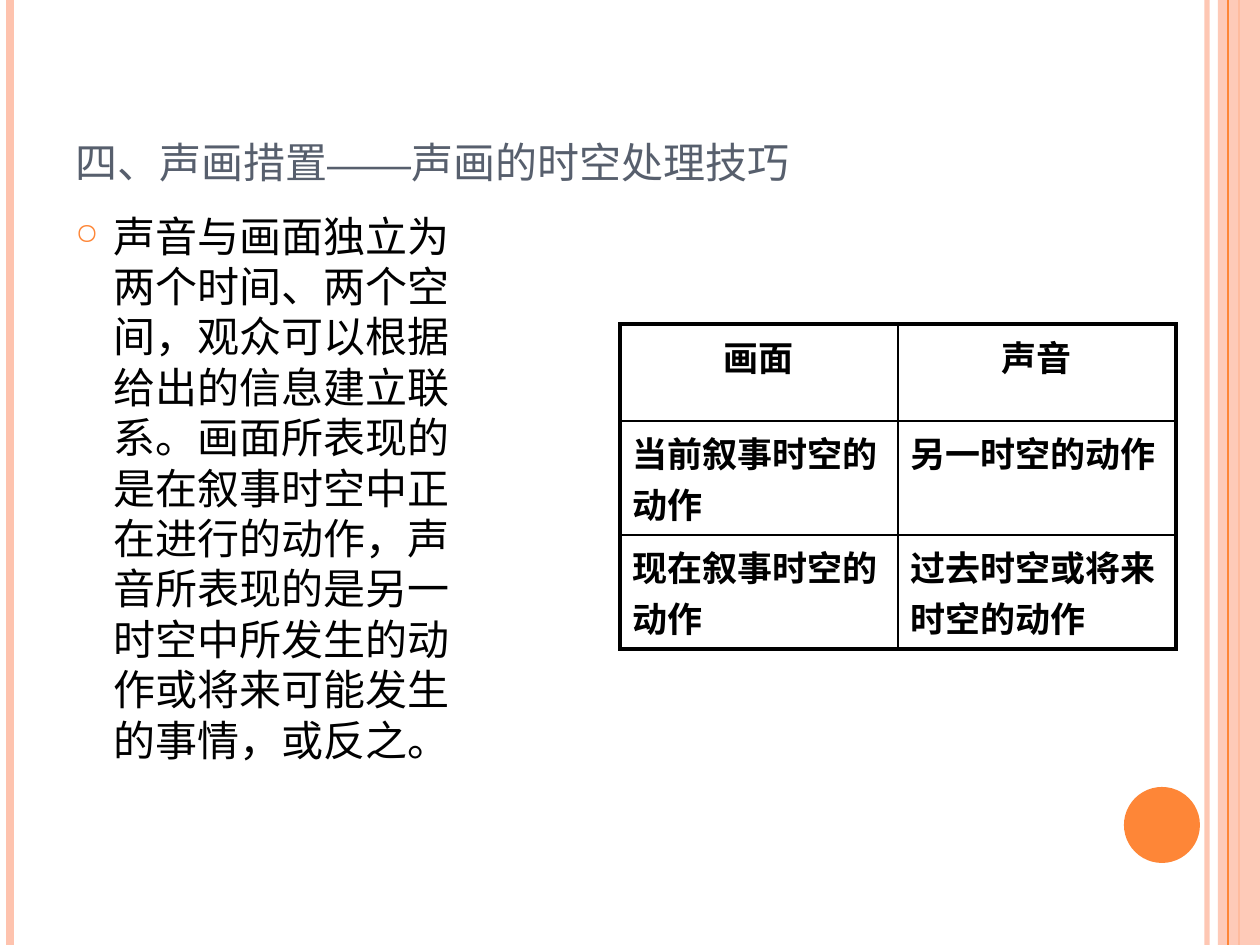
from dataclasses import dataclass

from lxml import etree
from pptx import Presentation, util as u
from pptx.dml.color import RGBColor
from pptx.enum import lang, shapes, text
from pptx.oxml import ns

TITLE = "四、声画措置——声画的时空处理技巧"
BODY = ("声音与画面独立为两个时间、两个空间，观众可以根据给出的信息建立联系。"
        "画面所表现的是在叙事时空中正在进行的动作，声音所表现的是另一时空中"
        "所发生的动作或将来可能发生的事情，或反之。")
ROWS = [
    ("画面", "声音"),
    ("当前叙事时空的动作", "另一时空的动作"),
    ("现在叙事时空的动作", "过去时空或将来时空的动作"),
]


@dataclass(frozen=True)
class Theme:
    orange: str = "FE8637"
    peach: str = "FEC3AE"
    slate: str = "575F6D"
    black: str = "000000"
    text_font: str = "TeX Gyre Schola"
    table_font: str = "Arial"
    title_size: int = 30
    body_size: int = 24
    table_size: int = 20
    outer_border: float = 2.25
    inner_border: float = 1


THEME = Theme()
PAGE_W, PAGE_H = 1260, 945
TITLE_BOX = (63, 38, 1134, 157)
BODY_BOX = (63, 204, 438, 586)
TABLE_AT = (620, 324)
COL_W = 278
HEAD_H, ROW_H = 97, 114  # body rows hold two lines of text
BAND = (1218, 0, 42, PAGE_H)
DISC = (1124, 787, 76, 76)
# x, colour, width in points, opacity in percent
LINES_BEHIND = [
    (1207, THEME.peach, 3, 93),
    (10, THEME.peach, 4.5, 100),
    (1239, THEME.orange, 1.5, 100),
]
LINE_FRONT = (1228, THEME.orange, 0.75, 100)


def px(*values):
    return [u.Emu(round(value * 914400 / 126)) for value in values]


def child(parent, tag, **attributes):
    return etree.SubElement(parent, ns.qn(tag), attributes)


def set_opacity(element, percent):
    if percent < 100:
        color = next(element.iter(ns.qn("a:srgbClr")))
        child(color, "a:alpha", val=str(percent * 1000))


def add_rule(page, x, color, width, opacity):
    """Draw a vertical line over the full page height."""
    rule = page.shapes.add_connector(
        shapes.MSO_CONNECTOR.STRAIGHT, *px(x, 0, x, PAGE_H))
    rule.line.color.rgb = RGBColor.from_string(color)
    rule.line.width = u.Pt(width)
    set_opacity(rule.line._ln, opacity)
    child(rule._element.spPr, "a:effectLst")


def add_filled(page, kind, place, color, opacity=100):
    shape = page.shapes.add_shape(kind, *px(*place))
    shape.shadow.inherit = False
    shape.fill.solid()
    shape.fill.fore_color.rgb = RGBColor.from_string(color)
    shape.line.fill.background()
    set_opacity(shape._element.spPr, opacity)


def style(para, font, size, color, bold=False):
    span = para.runs[0]
    span.font.name = font
    span.font.size = u.Pt(size)
    span.font.bold = bold
    span.font.color.rgb = RGBColor.from_string(color)
    span.font.language_id = lang.MSO_LANGUAGE_ID.SIMPLIFIED_CHINESE
    return span


def add_text(page, place, words, size, color, anchor):
    box = page.shapes.add_textbox(*px(*place))
    frame = box.text_frame
    frame.word_wrap = True
    frame.vertical_anchor = anchor
    frame.text = words
    para = frame.paragraphs[0]
    span = style(para, THEME.text_font, size, color)
    child(span._r.get_or_add_rPr(), "a:ea", typeface=THEME.text_font)
    return para, span


def add_bullet(para):
    para.space_before = u.Pt(6)
    props = para._p.get_or_add_pPr()
    indent = u.Inches(0.3)
    props.set("marL", str(indent))
    props.set("indent", str(-indent))
    child(child(props, "a:buClr"), "a:srgbClr", val=THEME.orange)
    child(props, "a:buSzPct", val="70000")
    child(props, "a:buChar", char="○")


def set_borders(cell, row, col):
    """Thick on the table's outer edge, thin inside."""
    outer = {"a:lnL": col == 0, "a:lnR": col == len(ROWS[0]) - 1,
             "a:lnT": row == 0, "a:lnB": row == len(ROWS) - 1}
    props = cell._tc.get_or_add_tcPr()
    for tag, is_outer in outer.items():
        width = THEME.outer_border if is_outer else THEME.inner_border
        line = child(props, tag, w=str(u.Pt(width)))
        child(child(line, "a:solidFill"), "a:srgbClr", val=THEME.black)


def add_grid(page):
    cols = len(ROWS[0])
    heights = [HEAD_H] + [ROW_H] * (len(ROWS) - 1)
    table = page.shapes.add_table(
        len(ROWS), cols,
        *px(*TABLE_AT, COL_W * cols, sum(heights))).table
    table.first_row = table.horz_banding = False
    for column in table.columns:
        column.width = px(COL_W)[0]
    for r, words in enumerate(ROWS):
        table.rows[r].height = px(heights[r])[0]
        for c, word in enumerate(words):
            cell = table.cell(r, c)
            cell.text_frame.text = word
            para = cell.text_frame.paragraphs[0]
            style(para, THEME.table_font, THEME.table_size, THEME.black, True)
            if r == 0:
                para.alignment = text.PP_ALIGN.CENTER
            before = child(para._p.get_or_add_pPr(), "a:spcBef")
            child(before, "a:spcPct", val="20000")
            set_borders(cell, r, c)
            cell.fill.background()


def main():
    deck = Presentation()
    deck.slide_width, deck.slide_height = px(PAGE_W, PAGE_H)
    page = deck.slides.add_slide(deck.slide_layouts[6])

    for rule in LINES_BEHIND:
        add_rule(page, *rule)
    add_filled(page, shapes.MSO_SHAPE.RECTANGLE, BAND, THEME.peach, 87)
    add_rule(page, *LINE_FRONT)
    add_filled(page, shapes.MSO_SHAPE.OVAL, DISC, THEME.orange)

    _, title_span = add_text(page, TITLE_BOX, TITLE, THEME.title_size,
                             THEME.slate, text.MSO_ANCHOR.BOTTOM)
    title_span._r.get_or_add_rPr().set("cap", "small")
    body_para, _ = add_text(page, BODY_BOX, BODY, THEME.body_size,
                            THEME.black, text.MSO_ANCHOR.TOP)
    add_bullet(body_para)
    add_grid(page)
    deck.save("out.pptx")


if __name__ == "__main__":
    main()
